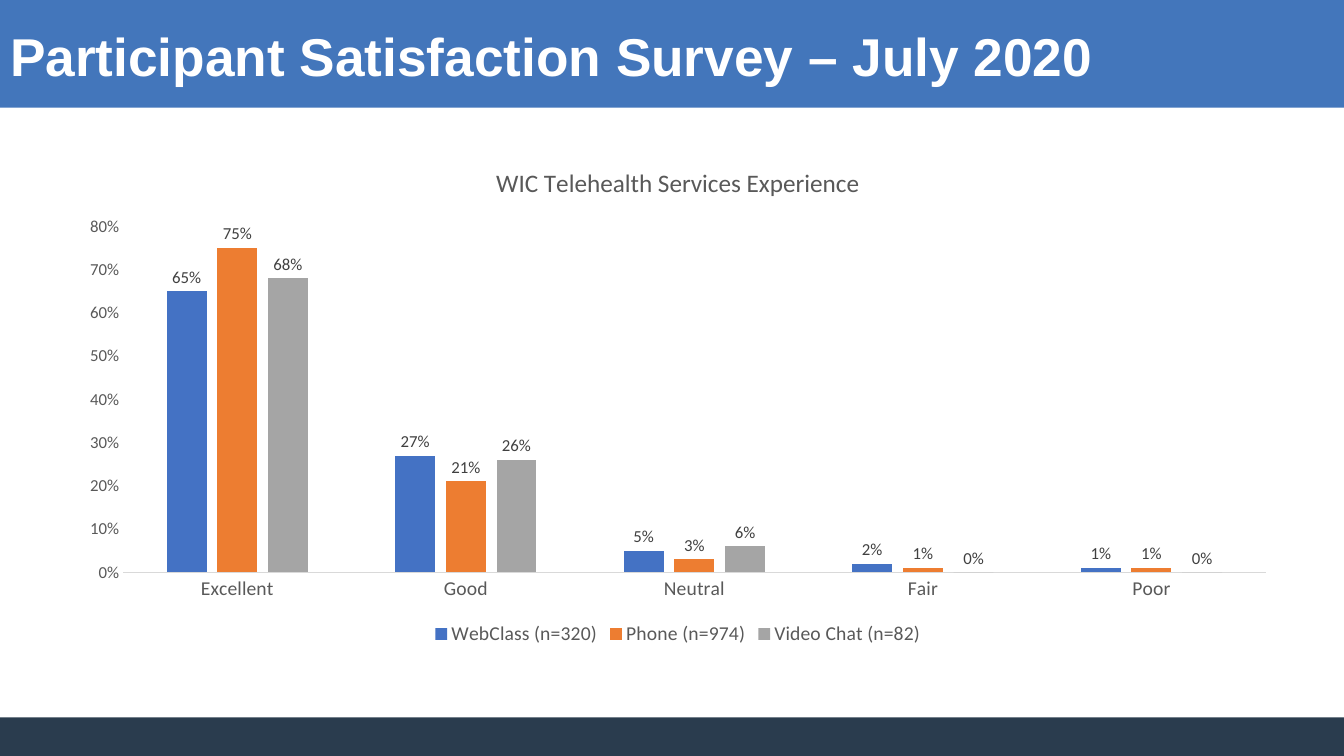
from pptx import Presentation
from pptx.chart.data import CategoryChartData
from pptx.dml.color import RGBColor
from pptx.enum.chart import (XL_CHART_TYPE as ChartType, XL_LABEL_POSITION as LabelPos,
                             XL_LEGEND_POSITION as LegendPos, XL_TICK_MARK as Tick)
from pptx.enum.shapes import MSO_SHAPE as Shape
from pptx.enum.text import MSO_ANCHOR as Anchor, MSO_AUTO_SIZE as AutoSize, PP_ALIGN as Align
from pptx.util import Pt

HEADING = "Participant Satisfaction Survey – July 2020"
CHART_TITLE = "WIC Telehealth Services Experience"
RATINGS = ["Excellent", "Good", "Neutral", "Fair", "Poor"]
SERVICES = [
    ("WebClass (n=320)", "service1", [0.65, 0.27, 0.05, 0.02, 0.01]),
    ("Phone (n=974)", "service2", [0.75, 0.21, 0.03, 0.01, 0.01]),
    ("Video Chat (n=82)", "service3", [0.68, 0.26, 0.06, 0, 0]),
]
WIDTH, HEIGHT = 960, 540
HEADER_HEIGHT, FOOTER_HEIGHT = 77, 27.5
BANDS = [
    (0, HEADER_HEIGHT, "header"),
    (HEIGHT - FOOTER_HEIGHT, FOOTER_HEIGHT, "footer"),
]
HEADING_BOX = (0, 18, 896, 59.5)
CHART_BOX = (46.8, 103.7, 874.8, 360.7)
PERCENT = "0%"
THEME = {
    "colors": {
        "header": "4376BB", "footer": "2A3C4E", "heading": "FFFFFF",
        "muted": "595959", "label": "404040", "axis": "D9D9D9",
        "service1": "4472C4", "service2": "ED7D31", "service3": "A5A5A5",
    },
    "sizes": {"heading": 38, "chart_title": 18, "category": 14, "value": 12},
    "fonts": {"heading": "Arial", "chart": "Calibri"},
}


def color(role):
    """Return the theme colour for a role."""
    return RGBColor.from_string(THEME["colors"][role])


def style_font(font, size, role="muted", family="chart", bold=False):
    """Format a font from theme roles."""
    font.name = THEME["fonts"][family]
    font.size = Pt(THEME["sizes"][size])
    font.bold = bold
    font.color.rgb = color(role)


def write_text(frame, text, **style):
    """Write one formatted line into a text frame."""
    line = frame.paragraphs[0]
    run = line.add_run()
    run.text = text
    style_font(run.font, **style)
    return line


def add_bands(slide):
    """Draw the header and footer bands."""
    for top, height, role in BANDS:
        band = slide.shapes.add_shape(Shape.RECTANGLE, 0, Pt(top), Pt(WIDTH), Pt(height))
        band.shadow.inherit = False
        band.fill.solid()
        band.fill.fore_color.rgb = color(role)
        band.line.fill.background()


def add_heading(slide):
    """Fill the title placeholder and raise it above the header band."""
    heading = slide.shapes.title
    heading.left, heading.top, heading.width, heading.height = map(Pt, HEADING_BOX)
    frame = heading.text_frame
    frame.auto_size = AutoSize.NONE
    frame.word_wrap = True
    frame.vertical_anchor = Anchor.TOP
    line = write_text(frame, HEADING, size="heading", role="heading",
                      family="heading", bold=True)
    line.alignment = Align.LEFT
    line.line_spacing = 0.9
    heading.element.getparent().append(heading.element)


def style_axes(chart):
    """Format the rating and percentage axes."""
    ratings, shares = chart.category_axis, chart.value_axis
    for axis, size in ((ratings, "category"), (shares, "value")):
        axis.major_tick_mark = axis.minor_tick_mark = Tick.NONE
        axis.has_major_gridlines = False
        style_font(axis.tick_labels.font, size)
    ratings.format.line.color.rgb = color("axis")
    ratings.format.line.width = Pt(0.75)
    shares.format.line.fill.background()
    shares.minimum_scale, shares.maximum_scale, shares.major_unit = 0, 0.8, 0.1
    shares.tick_labels.number_format = PERCENT
    shares.tick_labels.number_format_is_linked = False


def style_services(plot):
    """Format the columns and their labels."""
    plot.gap_width, plot.overlap = 219, -27
    plot.vary_by_categories = False
    for columns, (_, role, _) in zip(plot.series, SERVICES):
        columns.format.fill.solid()
        columns.format.fill.fore_color.rgb = color(role)
        columns.invert_if_negative = False
        labels = columns.data_labels
        labels.show_value = True
        labels.position = LabelPos.OUTSIDE_END
        labels.number_format = PERCENT
        labels.number_format_is_linked = False
        style_font(labels.font, "value", "label")


def add_survey_chart(slide):
    """Add the clustered column chart of survey ratings."""
    survey = CategoryChartData(number_format=PERCENT)
    survey.categories = RATINGS
    for name, _, shares in SERVICES:
        survey.add_series(name, shares)
    chart = slide.shapes.add_chart(ChartType.COLUMN_CLUSTERED, *map(Pt, CHART_BOX), survey).chart
    chart.font.name = THEME["fonts"]["chart"]
    chart.has_title = True
    write_text(chart.chart_title.text_frame, CHART_TITLE, size="chart_title")
    chart.chart_title.include_in_layout = False
    chart.has_legend = True
    chart.legend.position = LegendPos.BOTTOM
    chart.legend.include_in_layout = False
    style_font(chart.legend.font, "category")
    style_axes(chart)
    style_services(chart.plots[0])


def main():
    """Build and save the survey slide."""
    deck = Presentation()
    deck.slide_width, deck.slide_height = Pt(WIDTH), Pt(HEIGHT)
    slide = deck.slides.add_slide(deck.slide_layouts.get_by_name("Title Only"))
    add_bands(slide)
    add_heading(slide)
    add_survey_chart(slide)
    deck.save("out.pptx")


if __name__ == "__main__":
    main()
